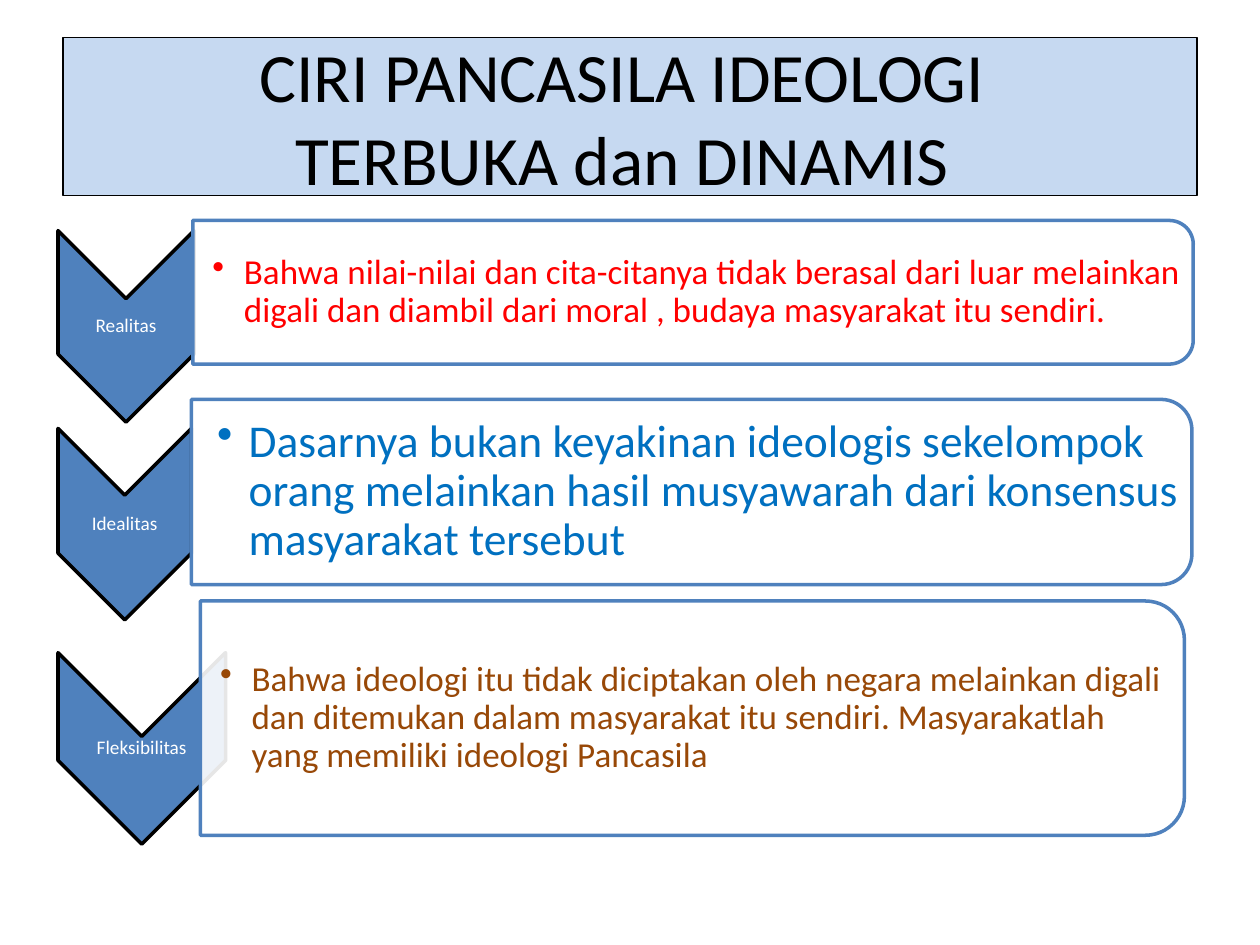
from lxml import etree
from pptx import Presentation
from pptx import util as u
from pptx.dml.color import RGBColor
from pptx.enum import shapes, text
from pptx.oxml import ns

COLORS = {
    "banner": "C6D9F1", "black": "000000", "white": "FFFFFF", "blue": "4F81BD",
    "red": "FF0000", "azure": "0070C0", "brown": "984807",
}
FONT = "Calibri"
CHEVRON_HEIGHT = 1.52
CORNER_INSET = 0.05
TRAITS = [
    ("Realitas", (0.46, 1.83, 1.08), (1.53, 1.75, 7.94, 1.14), 20, "red",
     "Bahwa nilai-nilai dan cita-citanya tidak berasal dari luar melainkan digali "
     "dan diambil dari moral , budaya masyarakat itu sendiri."),
    ("Idealitas", (0.46, 3.4, 1.06), (1.52, 3.17, 7.94, 1.47), 26, "azure",
     "Dasarnya bukan keyakinan ideologis sekelompok orang melainkan hasil "
     "musyawarah dari konsensus masyarakat tersebut"),
    ("Fleksibilitas", (0.46, 5.18, 1.33), (1.59, 4.77, 7.81, 1.86), 20, "brown",
     "Bahwa ideologi itu tidak diciptakan oleh negara melainkan digali dan ditemukan "
     "dalam masyarakat itu sendiri. Masyarakatlah yang memiliki ideologi Pancasila"),
]


class TraitSlide:
    """Holds the style and the current slide."""

    def __init__(self, deck):
        self.page = deck.slides.add_slide(deck.slide_layouts[5])

    def color(self, name):
        return RGBColor.from_string(COLORS[name])

    def paint(self, shape, fill, line, width):
        shape.fill.solid()
        shape.fill.fore_color.rgb = self.color(fill)
        shape.line.color.rgb = self.color(line)
        shape.line.width = u.Pt(width)

    def set_words(self, frame, words, size, color, align):
        frame.text = words
        frame.word_wrap = True
        frame.auto_size = text.MSO_AUTO_SIZE.NONE
        frame.vertical_anchor = text.MSO_ANCHOR.MIDDLE
        para = frame.paragraphs[0]
        para.alignment = align
        for span in para.runs:
            span.font.name = FONT
            span.font.size = u.Pt(size)
            span.font.color.rgb = self.color(color)
        return para

    def title(self, words):
        box = self.page.shapes.title
        box.left, box.top, box.width, box.height = map(u.Inches, (0.5, 0.3, 9, 1.25))
        self.paint(box, "banner", "black", 0.75)
        self.set_words(box.text_frame, words, 39.6, "black", text.PP_ALIGN.CENTER)

    def turned_shape(self, kind, left, top, width, height, fill, line):
        shift = (width - height) / 2
        place = map(u.Inches, (left + shift, top - shift, height, width))
        shape = self.page.shapes.add_shape(kind, *place)
        shape.rotation = 90
        shape.shadow.inherit = False
        self.paint(shape, fill, line, 2)
        return shape

    def text_box(self, place, words, size, color, align, indent=0.01):
        box = self.page.shapes.add_textbox(*map(u.Inches, place))
        frame = box.text_frame
        frame.margin_left = u.Inches(indent)
        frame.margin_top = frame.margin_right = frame.margin_bottom = u.Inches(0.01)
        para = self.set_words(frame, words, size, color, align)
        para.line_spacing = 0.9
        return para

    def chevron(self, left, top, width, label):
        self.turned_shape(shapes.MSO_SHAPE.CHEVRON, left, top, width,
                          CHEVRON_HEIGHT, "blue", "black")
        place = (left, top + width / 2, width, CHEVRON_HEIGHT - width)
        self.text_box(place, label, 11, "white", text.PP_ALIGN.CENTER)

    def panel(self, left, top, width, height, words, size, color):
        shape = self.turned_shape(shapes.MSO_SHAPE.ROUND_2_SAME_RECTANGLE, left, top,
                                  width, height, "white", "blue")
        tint = shape.element.spPr.find(ns.qn("a:solidFill"))[0]
        etree.SubElement(tint, ns.qn("a:alpha"), val="90000")
        inset = CORNER_INSET * height
        place = (left, top + inset, width - inset, height - 2 * inset)
        para = self.text_box(place, words, size, color, text.PP_ALIGN.LEFT, size / 128)
        para.level = 1
        props = para._p.get_or_add_pPr()
        props.set("marL", str(u.Inches(0.25)))
        props.set("indent", str(u.Inches(-0.25)))
        etree.SubElement(props, ns.qn("a:buChar"), char="•")


def main():
    deck = Presentation()
    deck.slide_width, deck.slide_height = u.Inches(10), u.Inches(7.5)
    slide = TraitSlide(deck)
    slide.title("CIRI PANCASILA IDEOLOGI \vTERBUKA dan DINAMIS ")
    for label, arrow, card, size, color, words in TRAITS:
        slide.chevron(*arrow, label)
        slide.panel(*card, words, size, color)
    deck.save("out.pptx")


if __name__ == "__main__":
    main()
